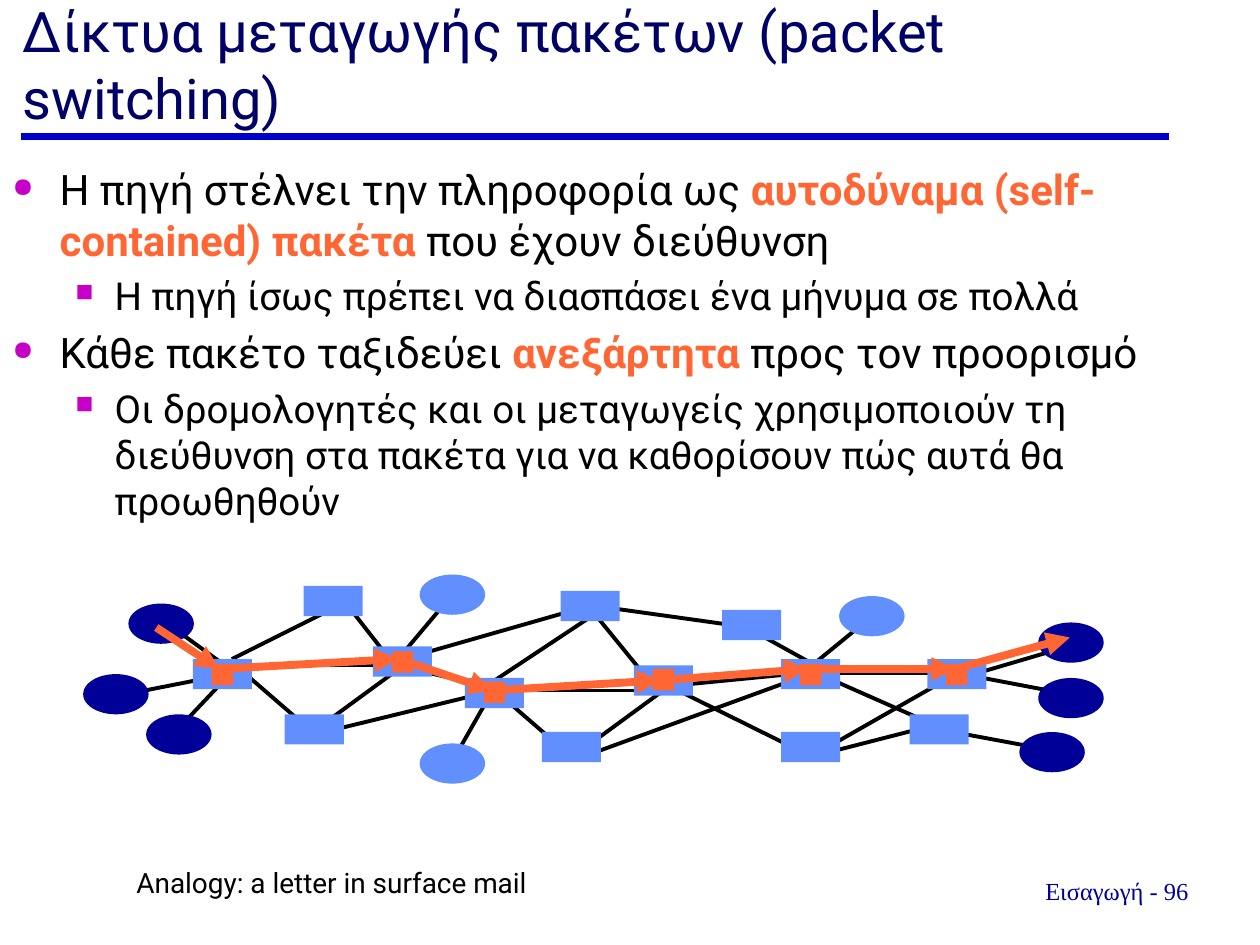
from dataclasses import dataclass
from itertools import pairwise

from lxml import etree
from pptx import Presentation
from pptx.dml.color import RGBColor
from pptx.enum.shapes import MSO_CONNECTOR, MSO_SHAPE
from pptx.enum.text import MSO_ANCHOR, PP_ALIGN
from pptx.oxml.ns import qn
from pptx.util import Pt

STRAIGHT = MSO_CONNECTOR.STRAIGHT
RECTANGLE, OVAL = MSO_SHAPE.RECTANGLE, MSO_SHAPE.OVAL
TOP, BOTTOM = MSO_ANCHOR.TOP, MSO_ANCHOR.BOTTOM
LEFT, CENTER, RIGHT = PP_ALIGN.LEFT, PP_ALIGN.CENTER, PP_ALIGN.RIGHT


@dataclass(frozen=True)
class Theme:
    font: str = "Roboto"
    footer_font: str = "Times New Roman"
    title: str = "000066"
    rule: str = "0000CC"
    text: str = "000000"
    accent: str = "FF6633"
    bullet: str = "C700C7"
    host: str = "000099"
    node: str = "618FFD"
    title_size: int = 32
    body_sizes: tuple = (24, 22)
    note_size: int = 16
    footer_size: int = 14


THEME = Theme()

# Each bullet: level, then (text, emphasised) spans
BULLETS = [
    (0, [("Η πηγή στέλνει την πληροφορία ως ", False),
         ("αυτοδύναμα (self-contained) πακέτα ", True),
         ("που έχουν διεύθυνση", False)]),
    (1, [("Η πηγή ίσως πρέπει να διασπάσει ένα μήνυμα σε πολλά", False)]),
    (0, [("Κάθε πακέτο ταξιδεύει ", False),
         ("ανεξάρτητα ", True),
         ("προς τον προορισμό", False)]),
    (1, [("Οι δρομολογητές και οι μεταγωγείς χρησιμοποιούν τη διεύθυνση "
          "στα πακέτα για να καθορίσουν πώς αυτά θα προωθηθούν", False)]),
]
# Per level: bullet character, left margin, hanging indent
BULLET_STYLES = [("●", 27, -27), ("■", 58.5, -22.5)]

ROUTER_SIZE = (33.8, 17.3)
HOST_SIZE = (37.4, 23)
PACKET_SIZE = (12.2, 12.2)

ROUTERS = [
    (110.2, 376.6), (162.7, 408.2), (529.9, 376.6), (446.4, 376.6),
    (446.4, 418.3), (362.2, 380.2), (320.4, 337.7), (309.6, 418.3),
    (412.6, 348.5), (213.1, 369.4), (265.7, 387.4), (173.5, 334.8),
    (519.8, 408.2),
]
ACTIVE_HOSTS = [(582.5, 418.3), (593.3, 387.4), (593.3, 355.7),
                (83.5, 408.2), (47.5, 385.2), (73.4, 344.9)]
IDLE_HOSTS = [(239.8, 328.3), (239.8, 424.8), (479.5, 340.6)]
PACKETS = [(121, 379.4), (457.2, 379.4), (373, 382.3),
           (276.5, 389.5), (223.9, 372.2), (540.7, 379.4)]
ROUTE = [(89.3, 358.6), (125.3, 382.3), (227.5, 376.6), (281.5, 394.6),
         (377.3, 388.8), (461.5, 382.3), (545.8, 382.3), (611.3, 364.3)]
LINKS = [
    (257.8, 340.6, 227.5, 376.6), (281.5, 394.6, 257.8, 436.3),
    (497.5, 352.8, 461.5, 382.3), (537.1, 416.9, 599, 428.4),
    (556.6, 385.2, 605.5, 370.8), (550.1, 385.2, 614.2, 397.4),
    (283.7, 395.3, 326.9, 432.7), (372.2, 394.6, 288.7, 394.6),
    (378, 395.3, 326.9, 432.7), (328.3, 434.2, 464.4, 384.5),
    (468, 384.5, 548.6, 384.5), (468, 385.2, 536.4, 415.4),
    (468, 429.8, 548.6, 383.8), (473.8, 429.8, 529.9, 415.4),
    (341.3, 344.9, 225.4, 378), (103.7, 362.2, 127.4, 379.4),
    (135.4, 380.9, 100.1, 418.3), (425.5, 357.8, 472.3, 383.8),
    (330.5, 344.9, 433.4, 359.3), (135.4, 380.9, 178.6, 418.3),
    (223.9, 380.2, 140.4, 380.2), (229.7, 380.9, 178.6, 418.3),
    (229.7, 380.9, 278.6, 392.4), (179.3, 419.8, 291.6, 392.4),
    (132.5, 376.6, 197.3, 344.2), (279.4, 391, 337, 352.8),
    (133.9, 384.5, 68.4, 397.4), (339.1, 349.9, 373.7, 392.4),
    (373, 387.4, 464.4, 432.7), (197.3, 344.2, 225.4, 380.2),
    (385.9, 391.7, 466.6, 383.8),
]


def rgb(color):
    return RGBColor.from_string(color)


def set_font(font, size, color, name=THEME.font):
    font.name = name
    font.size = Pt(size)
    font.color.rgb = rgb(color)


def add_line(page, start, end, color, width, arrow=False):
    line = page.shapes.add_connector(STRAIGHT, *map(Pt, (*start, *end)))
    line.line.color.rgb = rgb(color)
    line.line.width = Pt(width)
    if arrow:
        outline = line.line._get_or_add_ln()
        etree.SubElement(outline, qn("a:tailEnd"), type="triangle")
    etree.SubElement(line._element.spPr, qn("a:effectLst"))


def add_marks(page, kind, positions, size, color):
    """Draw one plain filled shape of the same size at every position."""
    for position in positions:
        mark = page.shapes.add_shape(kind, *map(Pt, (*position, *size)))
        mark.shadow.inherit = False
        mark.fill.solid()
        mark.fill.fore_color.rgb = rgb(color)
        mark.line.fill.background()


def add_box(page, bounds, anchor=TOP, wrap=True):
    frame = page.shapes.add_textbox(*map(Pt, bounds)).text_frame
    frame.word_wrap = wrap
    frame.vertical_anchor = anchor
    return frame


def add_label(page, bounds, text, size, color, align=LEFT, name=THEME.font,
              **box_options):
    para = add_box(page, bounds, **box_options).paragraphs[0]
    para.text = text
    para.alignment = align
    set_font(para.font, size, color, name)


def set_bullet(para, level):
    character, margin, indent = BULLET_STYLES[level]
    properties = para._p.get_or_add_pPr()
    properties.set("marL", str(Pt(margin)))
    properties.set("indent", str(Pt(indent)))
    color = etree.SubElement(properties, qn("a:buClr"))
    etree.SubElement(color, qn("a:srgbClr"), val=THEME.bullet)
    etree.SubElement(properties, qn("a:buSzPct"), val="64000")
    etree.SubElement(properties, qn("a:buChar"), char=character)


def add_bullets(page, bounds):
    frame = add_box(page, bounds)
    for index, (level, spans) in enumerate(BULLETS):
        para = frame.add_paragraph() if index else frame.paragraphs[0]
        size = THEME.body_sizes[level]
        para.level = level
        para.space_before = Pt(0.2 * size)
        set_bullet(para, level)
        for text, emphasised in spans:
            span = para.add_run()
            span.text = text
            span.font.bold = emphasised
            set_font(span.font, size,
                     THEME.accent if emphasised else THEME.text)


def add_network(page):
    for x1, y1, x2, y2 in LINKS:
        add_line(page, (x1, y1), (x2, y2), THEME.text, 2.25)
    add_marks(page, RECTANGLE, ROUTERS, ROUTER_SIZE, THEME.node)
    add_marks(page, OVAL, ACTIVE_HOSTS, HOST_SIZE, THEME.host)
    add_marks(page, RECTANGLE, PACKETS, PACKET_SIZE, THEME.accent)
    for start, end in pairwise(ROUTE):
        add_line(page, start, end, THEME.accent, 4.5, arrow=True)
    add_marks(page, OVAL, IDLE_HOSTS, HOST_SIZE, THEME.node)


def main():
    deck = Presentation()
    deck.slide_width, deck.slide_height = Pt(720), Pt(540)
    page = deck.slides.add_slide(deck.slide_layouts[6])
    add_line(page, (12.2, 77.8), (668.2, 77.8), THEME.rule, 4)
    add_label(page, (575.3, 496.8, 126, 23.8), "Εισαγωγή - 96",
              THEME.footer_size, THEME.host, CENTER, THEME.footer_font)
    add_label(page, (5.8, 18, 696.2, 60.5),
              "Δίκτυα μεταγωγής πακέτων (packet switching)",
              THEME.title_size, THEME.title, anchor=BOTTOM)
    add_bullets(page, (0, 90, 720, 365.8))
    add_network(page)
    add_label(page, (70.6, 491, 237.6, 26.6),
              "Analogy: a letter in surface mail",
              THEME.note_size, THEME.text, RIGHT, wrap=False)
    deck.save("out.pptx")


if __name__ == "__main__":
    main()
